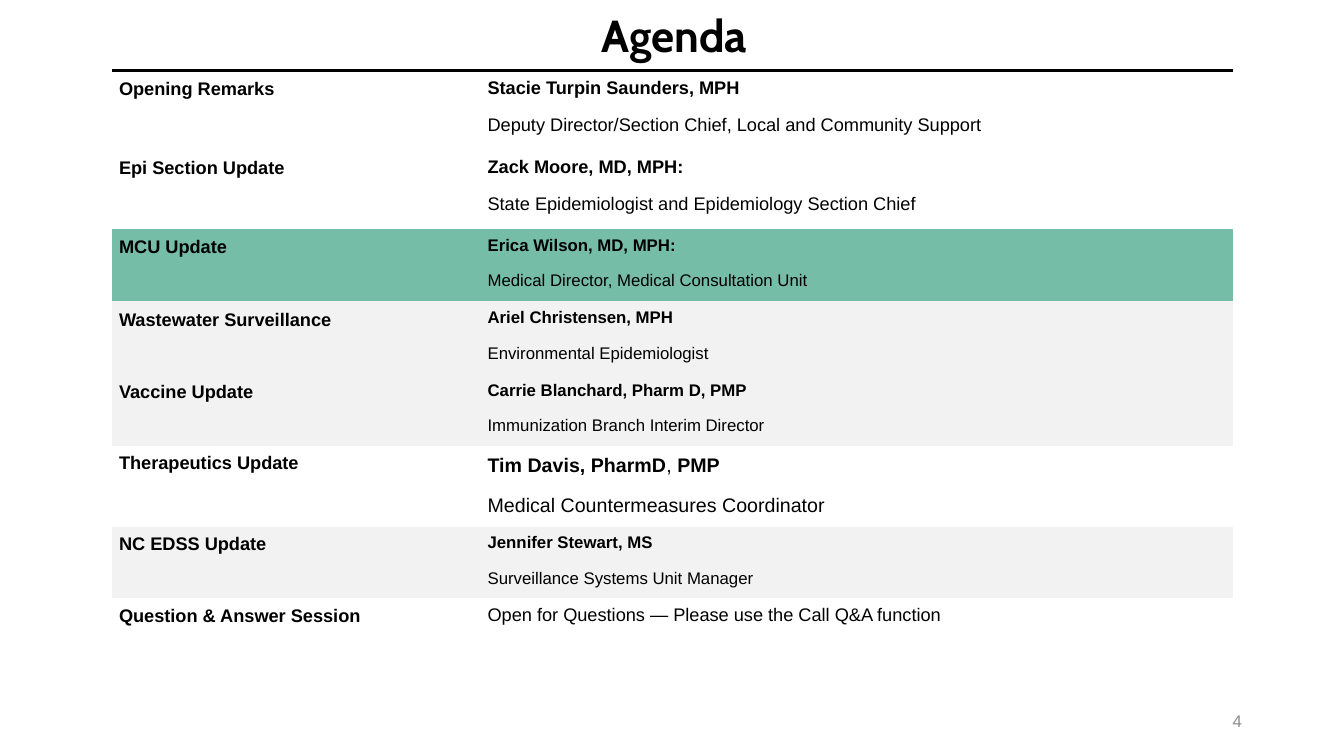
"""Build the agenda slide with its table of sessions and speakers."""
from dataclasses import dataclass

from lxml import etree
from pptx import Presentation
from pptx.dml.color import RGBColor
from pptx.enum.text import MSO_ANCHOR, PP_ALIGN
from pptx.oxml.ns import qn
from pptx.slide import Slide
from pptx.table import _Cell
from pptx.text.text import TextFrame, _Paragraph
from pptx.util import Pt

MIDDLE = MSO_ANCHOR.MIDDLE
LEFT, RIGHT = PP_ALIGN.LEFT, PP_ALIGN.RIGHT
COLORS = {"text": "000000", "number": "8C8C8C", "current": "75BDA7", "band": "F2F2F2"}
NO_STYLE = "{2D5ABB26-0587-4C30-8999-92F81FD0307C}"
TOPIC_SIZE = 13
GAP = 6
INSET = 5.04
LOOSE = 1.07


@dataclass(frozen=True)
class Run:
    text: str
    bold: bool = False


@dataclass(frozen=True)
class Session:
    topic: str
    lines: tuple[tuple[Run, ...], ...]
    height: float
    size: float = 12
    fill: str = ""
    topic_spacing: float = LOOSE
    spacing: float = 1.0


@dataclass(frozen=True)
class Label:
    text: str
    left: float
    top: float
    width: float
    height: float
    size: float
    font: str
    color: str
    bold: bool = False
    align: PP_ALIGN = LEFT


def speaker(name: str, role: str) -> tuple[tuple[Run, ...], ...]:
    return (Run(name, True),), (Run(role),)


SESSIONS = (
    Session("Opening Remarks", speaker(
        "Stacie Turpin Saunders, MPH",
        "Deputy Director/Section Chief, Local and Community Support"), 56.4, 13),
    Session("Epi Section Update", speaker(
        "Zack Moore, MD, MPH:",
        "State Epidemiologist and Epidemiology Section Chief"), 56.4, 13),
    Session("MCU Update", speaker(
        "Erica Wilson, MD, MPH:",
        "Medical Director, Medical Consultation Unit"), 51.8, fill="current"),
    Session("Wastewater Surveillance", speaker(
        "Ariel Christensen, MPH", "Environmental Epidemiologist"), 51.8, fill="band"),
    Session("Vaccine Update", speaker(
        "Carrie Blanchard, Pharm D, PMP",
        "Immunization Branch Interim Director"), 51.8, fill="band"),
    Session("Therapeutics Update", (
        (Run("Tim Davis, PharmD", True), Run(", "), Run("PMP", True)),
        (Run("Medical Countermeasures Coordinator"),)),
        57.4, 14, topic_spacing=1.0, spacing=LOOSE),
    Session("NC EDSS Update", speaker(
        "Jennifer Stewart, MS", "Surveillance Systems Unit Manager"),
        51, fill="band", topic_spacing=1.0),
    Session("Question & Answer Session", (
        (Run("Open for Questions — Please use the Call Q&A function"),),), 28.8, 13),
)
COLUMNS = (263.3, 537.5)
LABELS = (
    Label("4", 678.2, 500.4, 216, 28.8, 12, "Arial", "number", align=RIGHT),
    Label("Agenda", 422.6, 1.4, 123.8, 46.1, 32, "Cabin", "text", bold=True),
)


def add_run(p: _Paragraph, run: Run, size: float, font: str, color: str) -> None:
    r = p.add_run()
    r.text = run.text
    r.font.name = font
    r.font.size = Pt(size)
    r.font.bold = run.bold
    r.font.color.rgb = RGBColor.from_string(COLORS[color])


def add_label(s: Slide, label: Label) -> None:
    sp = s.shapes.add_textbox(Pt(label.left), Pt(label.top), Pt(label.width), Pt(label.height))
    tf = sp.text_frame
    tf.word_wrap = True
    tf.vertical_anchor = MIDDLE
    p = tf.paragraphs[0]
    p.alignment = label.align
    add_run(p, Run(label.text, label.bold), label.size, label.font, label.color)


def write_lines(tf: TextFrame, lines: tuple[tuple[Run, ...], ...], size: float,
                spacing: float) -> None:
    for i, line in enumerate(lines):
        p = tf.add_paragraph() if i else tf.paragraphs[0]
        if i:
            p.space_before = Pt(GAP)
        p.space_after = Pt(GAP)
        p.line_spacing = spacing
        for run in line:
            add_run(p, run, size, "Arial", "text")


def fill_cell(cell: _Cell, fill: str) -> None:
    cell.margin_left = cell.margin_right = Pt(INSET)
    cell.margin_top = cell.margin_bottom = Pt(INSET)
    if fill:
        cell.fill.solid()
        cell.fill.fore_color.rgb = RGBColor.from_string(COLORS[fill])
    else:
        cell.fill.background()


def add_top_border(cell: _Cell) -> None:
    line = etree.Element(qn("a:lnT"), w=str(Pt(2.25)))
    solid = etree.SubElement(line, qn("a:solidFill"))
    etree.SubElement(solid, qn("a:srgbClr"), val=COLORS["text"])
    cell._tc.get_or_add_tcPr().insert(0, line)


def add_agenda(s: Slide) -> None:
    sp = s.shapes.add_table(len(SESSIONS), len(COLUMNS), Pt(80), Pt(50.6), Pt(sum(COLUMNS)),
                            Pt(sum(session.height for session in SESSIONS)))
    table = sp.table
    table.first_row = table.horz_banding = False
    for style in sp.element.iter(qn("a:tableStyleId")):
        style.text = NO_STYLE
    for column, width in zip(table.columns, COLUMNS):
        column.width = Pt(width)
    for row, session in zip(table.rows, SESSIONS):
        row.height = Pt(session.height)
        topic, details = row.cells
        for cell in (topic, details):
            fill_cell(cell, session.fill)
        write_lines(topic.text_frame, ((Run(session.topic, True),),),
                    TOPIC_SIZE, session.topic_spacing)
        write_lines(details.text_frame, session.lines, session.size, session.spacing)
    for cell in table.rows[0].cells:
        add_top_border(cell)


def main() -> None:
    prs = Presentation()
    prs.slide_width, prs.slide_height = Pt(960), Pt(540)
    s = prs.slides.add_slide(prs.slide_layouts[6])
    add_agenda(s)
    for label in LABELS:
        add_label(s, label)
    prs.save("out.pptx")


if __name__ == "__main__":
    main()
